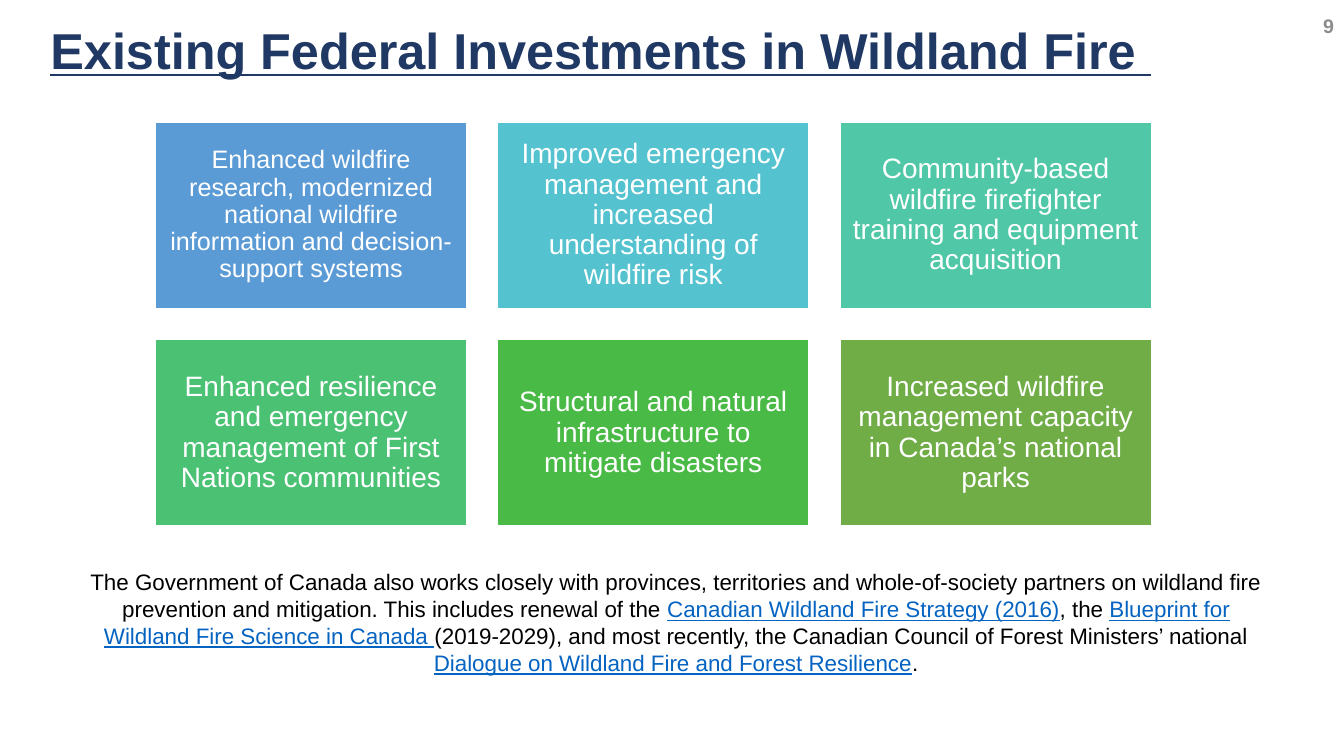
import pptx
import pptx.util
import pptx.dml.color
import pptx.enum.shapes
import pptx.enum.text

Inches = pptx.util.Inches
ALIGN = pptx.enum.text.PP_ALIGN
ANCHOR = pptx.enum.text.MSO_ANCHOR
COLORS = {
    "title": "203864",
    "number": "8C8C8C",
    "body": "000000",
    "link": "0563C1",
    "white": "FFFFFF",
    "blue": "5B9BD5",
    "cyan": "55C3CF",
    "teal": "50C8A7",
    "mint": "4BC174",
    "green": "4ABA46",
    "olive": "70AD47",
}


def rgb(name):
    return pptx.dml.color.RGBColor.from_string(COLORS[name])


def write(shape, runs, size, alignment, anchor, margins, spacing=1.0, bold=False):
    frame = shape.text_frame
    frame_format = {
        "word_wrap": True,
        "auto_size": pptx.enum.text.MSO_AUTO_SIZE.NONE,
        "vertical_anchor": anchor,
    }
    for side, margin in zip(("left", "top", "right", "bottom"), margins):
        frame_format[f"margin_{side}"] = Inches(margin)
    for name, value in frame_format.items():
        setattr(frame, name, value)
    paragraph = frame.paragraphs[0]
    paragraph.alignment = alignment
    paragraph.line_spacing = spacing
    for text, color, underline in runs:
        run = paragraph.add_run()
        run.text = text
        font_format = {
            "name": "Arial",
            "size": pptx.util.Pt(size),
            "bold": bold,
            "underline": underline,
        }
        for name, value in font_format.items():
            setattr(run.font, name, value)
        run.font.color.rgb = rgb(color)


presentation = pptx.Presentation()
presentation.slide_width = Inches(13.33)
presentation.slide_height = Inches(7.5)
slide = presentation.slides.add_slide(presentation.slide_layouts[5])

title = slide.shapes.title
title_place = {"left": 0.5, "top": 0, "width": 12.32, "height": 0.85}
for name, value in title_place.items():
    setattr(title, name, Inches(value))
write(title, [("Existing Federal Investments in Wildland Fire ", "title", True)],
      36, ALIGN.LEFT, ANCHOR.BOTTOM, (0, 0.05, 0.1, 0.05), 0.9, True)

page_number = slide.shapes.add_textbox(Inches(12.84), 0, Inches(0.49), Inches(0.5))
write(page_number, [("9", "number", False)],
      14, ALIGN.RIGHT, ANCHOR.MIDDLE, (0.1, 0.05, 0.1, 0.05), bold=True)

investments = [
    ("blue", 18, "Enhanced wildfire research, modernized national wildfire "
                 "information and decision-support systems"),
    ("cyan", 20, "Improved emergency management and increased understanding of wildfire risk"),
    ("teal", 20, "Community-based wildfire firefighter training and equipment acquisition"),
    ("mint", 20, "Enhanced resilience and emergency management of First Nations communities"),
    ("green", 20, "Structural and natural infrastructure to mitigate disasters"),
    ("olive", 20, "Increased wildfire management capacity in Canada’s national parks"),
]
for index, (color, size, text) in enumerate(investments):
    row, column = divmod(index, 3)
    tile = slide.shapes.add_shape(
        pptx.enum.shapes.MSO_SHAPE.RECTANGLE,
        Inches(1.54 + 3.395 * column), Inches(1.21 + 2.16 * row),
        Inches(3.09), Inches(1.85))
    tile.shadow.inherit = False
    tile.fill.solid()
    tile.fill.fore_color.rgb = rgb(color)
    tile.line.color.rgb = rgb("white")
    tile.line.width = pptx.util.Pt(1)
    write(tile, [(text, "white", False)], size, ALIGN.CENTER, ANCHOR.MIDDLE,
          (size * 0.004,) * 4, 0.9)

partnerships = slide.shapes.add_textbox(
    Inches(0.73), Inches(5.59), Inches(11.95), Inches(1.18))
write(partnerships, [
    ("The Government of Canada also works closely with provinces, territories and "
     "whole-of-society partners on wildland fire prevention and mitigation. "
     "This includes renewal of the ", "body", False),
    ("Canadian Wildland Fire Strategy (2016)", "link", True),
    (", the ", "body", False),
    ("Blueprint for Wildland Fire Science in Canada ", "link", True),
    ("(2019-2029), and most recently, the Canadian Council of Forest Ministers’ "
     "national ", "body", False),
    ("Dialogue on Wildland Fire and Forest Resilience", "link", True),
    (".", "body", False),
], 16, ALIGN.CENTER, ANCHOR.TOP, (0.1, 0.05, 0.1, 0.05))

presentation.save("out.pptx")
